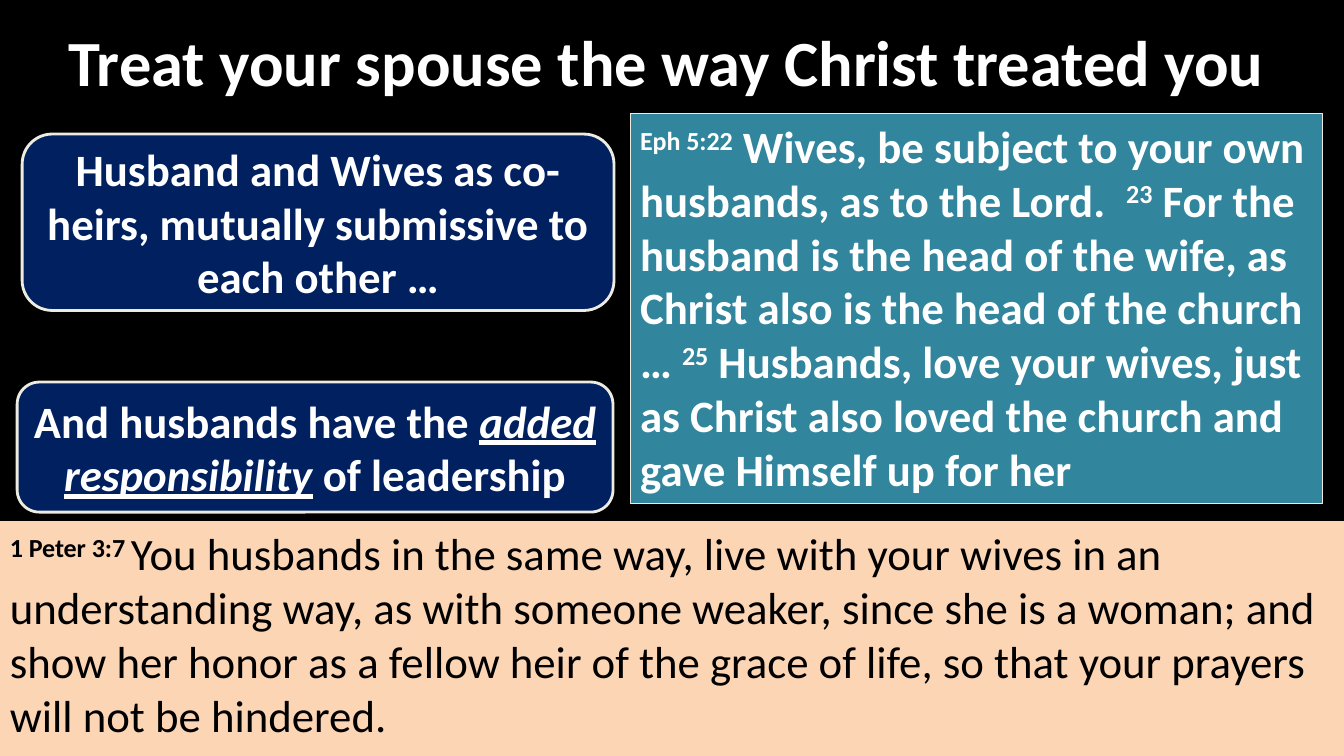
from pptx import Presentation
from pptx.dml.color import RGBColor
from pptx.enum.shapes import MSO_SHAPE as Shape
from pptx.enum.text import MSO_ANCHOR as Anchor, PP_ALIGN as Align
from pptx.util import Inches, Pt

WIDTH, HEIGHT = 13.33, 7.5
WHITE, BLACK, CREAM = "FFFFFF", "000000", "EEECE1"
NAVY, TEAL, PEACH = "002060", "31859C", "FCD5B5"

EPHESIANS = [
    ("Eph 5:22", "verse"),
    (" Wives, be subject to your own husbands, as to the Lord.  ", "bold"),
    ("23", "verse"),
    (" For the husband is the head of the wife, as Christ also is the head of the church … ", "bold"),
    ("25", "verse"),
    (" Husbands, love your wives, just as Christ also loved the church and gave Himself up for her", "bold"),
]
PETER = [
    ("1 Peter 3:7 ", "verse"),
    ("You husbands in the same way, live with your wives in an understanding way, "
     "as with someone weaker, since she is a woman; and show her honor as a fellow heir "
     "of the grace of life, so that your prayers will not be hindered.", "plain"),
]
CO_HEIRS = [("Husband and Wives as co-heirs, mutually submissive to each other …", "bold")]
LEADERSHIP = [
    ("And husbands have the ", "bold"),
    ("added responsibility", "stress"),
    (" of leadership", "bold"),
]


def rgb(value):
    return RGBColor.from_string(value)


def place(left, top, width, height):
    return [Inches(length) for length in (left, top, width, height)]


def write(frame, passages, color=WHITE, size=32, align=Align.LEFT, anchor=Anchor.TOP):
    frame.word_wrap = True
    frame.vertical_anchor = anchor
    paragraph = frame.paragraphs[0]
    paragraph.alignment = align
    for words, style in passages:
        run = paragraph.add_run()
        run.text = words
        font = run.font
        font.name, font.size, font.color.rgb = "Calibri", Pt(size), rgb(color)
        font.bold = style != "plain"
        if style == "stress":
            font.italic = font.underline = True
        if style == "verse":
            run._r.get_or_add_rPr().set("baseline", "30000")


def add_panel(slide, kind, box, fill, border=None):
    panel = slide.shapes.add_shape(kind, *place(*box))
    panel.shadow.inherit = False
    panel.fill.solid()
    panel.fill.fore_color.rgb = rgb(fill)
    if border:
        panel.line.color.rgb = rgb(CREAM)
        panel.line.width = Pt(border)
    else:
        panel.line.fill.background()
    return panel


def add_scripture(slide, box, fill, passages, color, border=None):
    panel = add_panel(slide, Shape.RECTANGLE, box, fill, border)
    write(panel.text_frame, passages, color)


def add_callout(slide, box, passages):
    callout = add_panel(slide, Shape.ROUNDED_RECTANGULAR_CALLOUT, box, NAVY, 2)
    for index, share in enumerate((-0.22, 0.5, 0.17)):
        callout.adjustments[index] = share
    write(callout.text_frame, passages, align=Align.CENTER, anchor=Anchor.MIDDLE)


def add_title(slide, box, words):
    title = slide.shapes.add_textbox(*place(*box))
    write(title.text_frame, [(words, "bold")], size=46, anchor=Anchor.MIDDLE)


def main():
    deck = Presentation()
    deck.slide_width, deck.slide_height = Inches(WIDTH), Inches(HEIGHT)
    slide = deck.slides.add_slide(deck.slide_layouts[6])
    slide.background.fill.solid()
    slide.background.fill.fore_color.rgb = rgb(BLACK)

    add_title(slide, (0.58, 0.08, 12.17, 1.05), "Treat your spouse the way Christ treated you")
    add_scripture(slide, (6.25, 1.13, 6.87, 3.87), TEAL, EPHESIANS, WHITE, border=0.75)
    add_callout(slide, (0.22, 1.33, 5.87, 1.75), CO_HEIRS)
    add_callout(slide, (0.17, 3.79, 5.91, 1.29), LEADERSHIP)
    peter_top = 5.17
    add_scripture(slide, (0, peter_top, WIDTH, HEIGHT - peter_top), PEACH, PETER, BLACK)
    deck.save("out.pptx")


if __name__ == "__main__":
    main()
